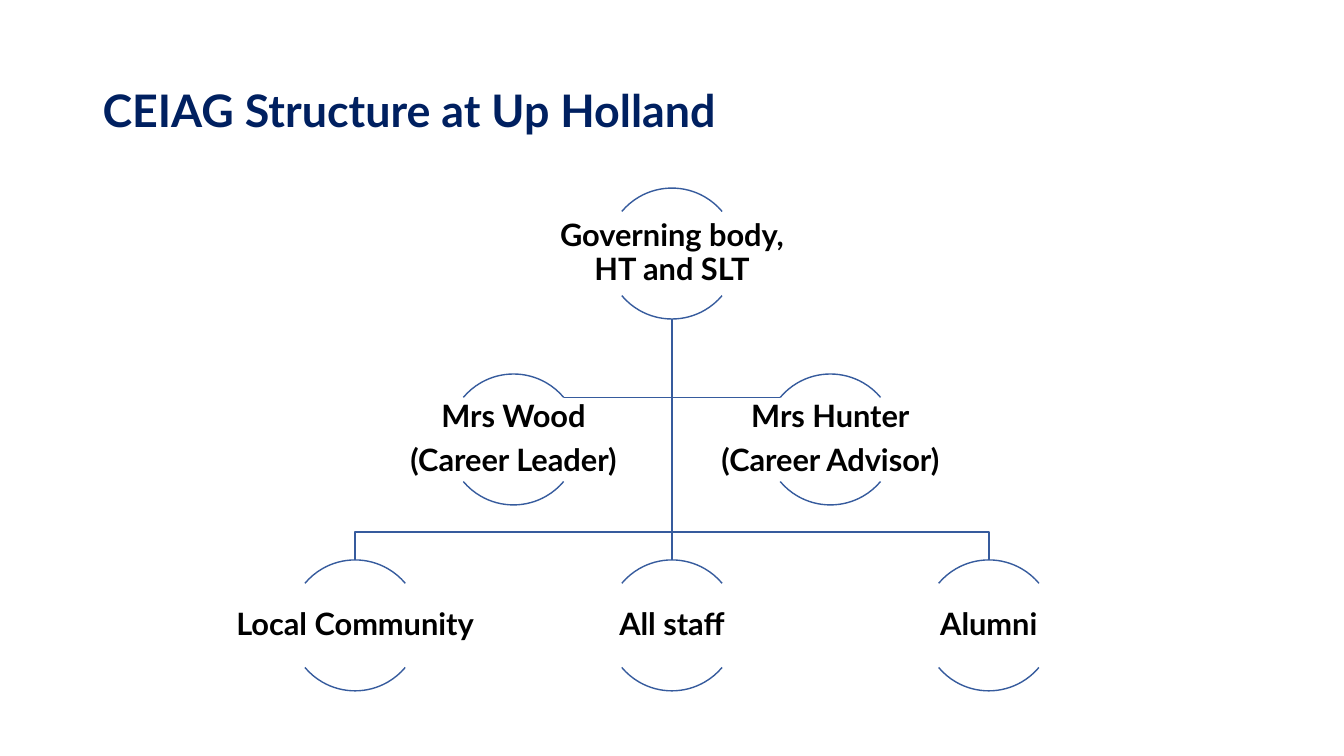
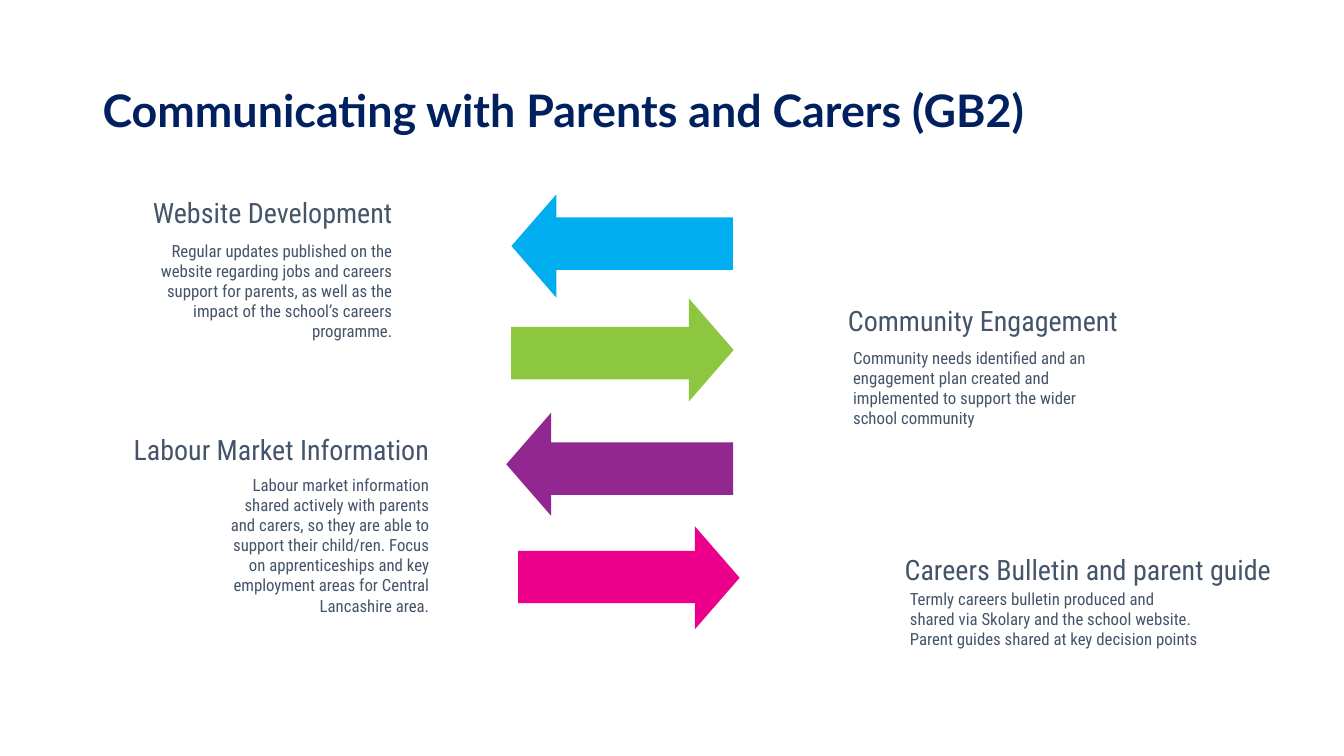
import dataclasses
import math

import lxml.etree
import pptx
import pptx.dml.color
import pptx.enum.shapes
import pptx.enum.text
import pptx.oxml.ns
import pptx.util

Cm = pptx.util.Cm
Pt = pptx.util.Pt
ALIGN = pptx.enum.text.PP_ALIGN
ANCHOR = pptx.enum.text.MSO_ANCHOR
SHAPE = pptx.enum.shapes.MSO_SHAPE


@dataclasses.dataclass(frozen=True)
class Theme:
    title_font: str = "Lato"
    caption_font: str = "Roboto Condensed"
    navy: str = "002060"
    black: str = "000000"
    slate: str = "445469"
    chart_line: str = "365B9D"
    cyan: str = "00AEEF"
    green: str = "8DC73F"
    purple: str = "91278F"
    pink: str = "EC008B"
    title_size: int = 32
    node_size: int = 22
    heading_size: int = 20
    body_size: int = 12
    line_width: float = 1


@dataclasses.dataclass(frozen=True)
class Box:
    """A rectangle in centimetres."""
    left: float
    top: float
    width: float
    height: float

    @property
    def right(self):
        return self.left + self.width

    @property
    def bottom(self):
        return self.top + self.height

    @property
    def centre(self):
        return self.left + self.width / 2

    def lengths(self):
        return [Cm(value) for value in (self.left, self.top, self.width, self.height)]


THEME = Theme()
TITLE_BOX = Box(2.33, 1, 29.21, 3.68)


def rgb(colour):
    return pptx.dml.color.RGBColor.from_string(colour)


def write_text(frame, lines, *, font, size, colour, bold=False, align=ALIGN.LEFT,
               anchor=ANCHOR.TOP, spacing=1.0, after=0, inset=None):
    """Fill a text frame with one paragraph for each line."""
    frame.word_wrap = True
    frame.auto_size = pptx.enum.text.MSO_AUTO_SIZE.NONE
    frame.vertical_anchor = anchor
    if inset is not None:
        frame.margin_left = frame.margin_right = Cm(inset)
        frame.margin_top = frame.margin_bottom = Cm(inset)
    for index, line in enumerate(lines):
        para = frame.add_paragraph() if index else frame.paragraphs[0]
        para.alignment = align
        para.line_spacing = spacing
        para.space_before = Pt(0)
        para.space_after = Pt(after)
        span = para.add_run()
        span.text = line
        span.font.name = font
        span.font.size = Pt(size)
        span.font.bold = bold
        span.font.color.rgb = rgb(colour)


def add_text(page, box, lines, **text_format):
    text_box = page.shapes.add_textbox(*box.lengths())
    write_text(text_box.text_frame, lines, **text_format)


def add_page(deck, title):
    page = deck.slides.add_slide(deck.slide_layouts[5])
    holder = page.shapes.title
    holder.left, holder.top, holder.width, holder.height = TITLE_BOX.lengths()
    write_text(holder.text_frame, [title], font=THEME.title_font, size=THEME.title_size,
               colour=THEME.navy, bold=True, anchor=ANCHOR.MIDDLE, spacing=0.9)
    return page


def style_line(shape):
    shape.line.color.rgb = rgb(THEME.chart_line)
    shape.line.width = Pt(THEME.line_width)


def style_fill(shape, colour):
    shape.shadow.inherit = False
    shape.fill.solid()
    shape.fill.fore_color.rgb = rgb(colour)
    shape.line.fill.background()


def add_outline(page, outline, close):
    """Build a freeform through points given in centimetres."""
    points = [(Cm(x), Cm(y)) for x, y in outline]
    builder = page.shapes.build_freeform(*points[0])
    builder.add_line_segments(points[1:], close=close)
    return builder.convert_to_shape()


def add_link(page, route):
    """Draw a straight connector for two points, or a bent line for more."""
    if len(route) == 2:
        (x1, y1), (x2, y2) = route
        link = page.shapes.add_connector(pptx.enum.shapes.MSO_CONNECTOR.STRAIGHT,
                                         Cm(x1), Cm(y1), Cm(x2), Cm(y2))
        lxml.etree.SubElement(link._element.spPr, pptx.oxml.ns.qn("a:effectLst"))
    else:
        link = add_outline(page, route, close=False)
        link.shadow.inherit = False
        link.fill.background()
    style_line(link)


def add_node(page, circle, lines):
    """Draw a label between the top and bottom arcs of a circle."""
    for start, end in ((132, 192), (24, 84)):
        arc = page.shapes.add_shape(SHAPE.ARC, *circle.lengths())
        arc.adjustments[0] = start
        arc.adjustments[1] = end
        arc.shadow.inherit = False
        arc.fill.background()
        style_line(arc)
    label = Box(circle.centre - circle.width, circle.top + 0.6,
                circle.width * 2, circle.height - 1.2)
    add_text(page, label, lines, font=THEME.title_font, size=THEME.node_size,
             colour=THEME.black, bold=True, align=ALIGN.CENTER, anchor=ANCHOR.MIDDLE,
             spacing=0.9, after=7.5, inset=0.05)


def add_organisation_chart(page, area, head, assistants, reports):
    """Draw three levels: a head, two assistants beside the trunk, and reports."""
    diameter = 3.3
    column_pitch = (area.width - diameter) / (len(reports) - 1)
    row_pitch = (area.height - diameter) / 2

    def circle(offset, row):
        return Box(area.centre + offset * column_pitch - diameter / 2,
                   area.top + row * row_pitch, diameter, diameter)

    head_circle = circle(0, 0)
    assistant_circles = [circle(offset, 1) for offset in (-0.5, 0.5)]
    middle = len(reports) // 2
    report_circles = [circle(index - middle, 2) for index in range(len(reports))]

    angle = math.radians(40)
    reach = diameter / 2 * math.cos(angle)
    branch_y = assistant_circles[0].top + diameter / 2 * (1 - math.sin(angle))
    bus_y = report_circles[0].top - 0.7
    start = (area.centre, head_circle.bottom)
    for place, side in zip(assistant_circles, (1, -1)):
        add_link(page, [start, (area.centre, branch_y),
                        (place.centre + side * reach, branch_y)])
    for index, place in enumerate(report_circles):
        bends = [] if index == middle else [(area.centre, bus_y), (place.centre, bus_y)]
        add_link(page, [start, *bends, (place.centre, place.top)])

    circles = [head_circle, *assistant_circles, *report_circles]
    for place, lines in zip(circles, [head, *assistants, *reports]):
        add_node(page, place, lines)


def add_arrow(page, box, colour, shaft_drop, points_left):
    """Draw a shaft, starting shaft_drop below the box top, and a triangular head."""
    head_length, shaft_height, overlap = 1.13, 1.32, 0.1
    shaft_length = box.width - head_length + overlap
    if points_left:
        tip, neck = box.left, box.left + head_length
        shaft_left = box.right - shaft_length
    else:
        tip, neck = box.right, box.right - head_length
        shaft_left = box.left
    shaft_box = Box(shaft_left, box.top + shaft_drop, shaft_length, shaft_height)
    shaft = page.shapes.add_shape(SHAPE.RECTANGLE, *shaft_box.lengths())
    style_fill(shaft, colour)
    head = add_outline(page, [(neck, box.top), (tip, box.top + box.height / 2),
                              (neck, box.bottom)], close=True)
    style_fill(head, colour)


def add_caption(page, body_box, heading, body, heading_rise, points_left):
    """Place a heading above its body, both set towards the same edge."""
    heading_width, indent = 10.1, 0.13
    left = body_box.right - heading_width if points_left else body_box.left - indent
    heading_box = Box(left, body_box.top - heading_rise, heading_width, 1.12)
    style = dict(font=THEME.caption_font, colour=THEME.slate,
                 align=ALIGN.RIGHT if points_left else ALIGN.LEFT)
    add_text(page, heading_box, [heading], size=THEME.heading_size, **style)
    add_text(page, body_box, body, size=THEME.body_size, **style)


def build_structure(deck):
    page = add_page(deck, "CEIAG Structure at Up Holland")
    add_organisation_chart(
        page, Box(7.3, 4.74, 19.27, 12.67),
        head=["Governing body, HT and SLT"],
        assistants=[["Mrs Wood", "(Career Leader)"], ["Mrs Hunter", "(Career Advisor)"]],
        reports=[["Local Community"], ["All staff"], ["Alumni"]])


def build_communication(deck):
    page = add_page(deck, "Communicating with Parents and Carers (GB2)")
    arrows = [
        (Box(12.89, 4.9, 5.58, 2.6), THEME.cyan, 0.58),
        (Box(12.88, 7.52, 5.61, 2.6), THEME.green, 0.72),
        (Box(12.76, 10.4, 5.72, 2.6), THEME.purple, 0.75),
        (Box(13.06, 13.26, 5.58, 2.6), THEME.pink, 0.62),
    ]
    captions = [
        (Box(3.38, 5.93, 6.76, 2.82), "Website Development",
         ["Regular updates published on the website regarding jobs and careers support "
          "for parents, as well as the impact of the school’s careers programme."], 1.12),
        (Box(21.25, 8.63, 6.76, 2.31), "Community Engagement",
         ["Community needs identified and an engagement plan created and implemented "
          "to support the wider school community"], 1.11),
        (Box(5.3, 11.83, 5.77, 3.84), "Labour Market Information",
         ["Labour market information shared actively with parents and carers, so they "
          "are able to support their child/ren. Focus on apprenticeships and key "
          "employment areas for Central Lancashire area."], 1.06),
        (Box(22.68, 14.71, 7.8, 2.31), "Careers Bulletin and parent guide",
         ["Termly careers bulletin produced and shared via Skolary and the school website.",
          "Parent guides shared at key decision points"], 0.91),
    ]
    for index, (arrow, caption) in enumerate(zip(arrows, captions)):
        points_left = index % 2 == 0
        add_arrow(page, *arrow, points_left)
        add_caption(page, *caption, points_left)


def main():
    deck = pptx.Presentation()
    deck.slide_width, deck.slide_height = Cm(33.87), Cm(19.05)
    build_structure(deck)
    build_communication(deck)
    deck.save("out.pptx")


if __name__ == "__main__":
    main()
